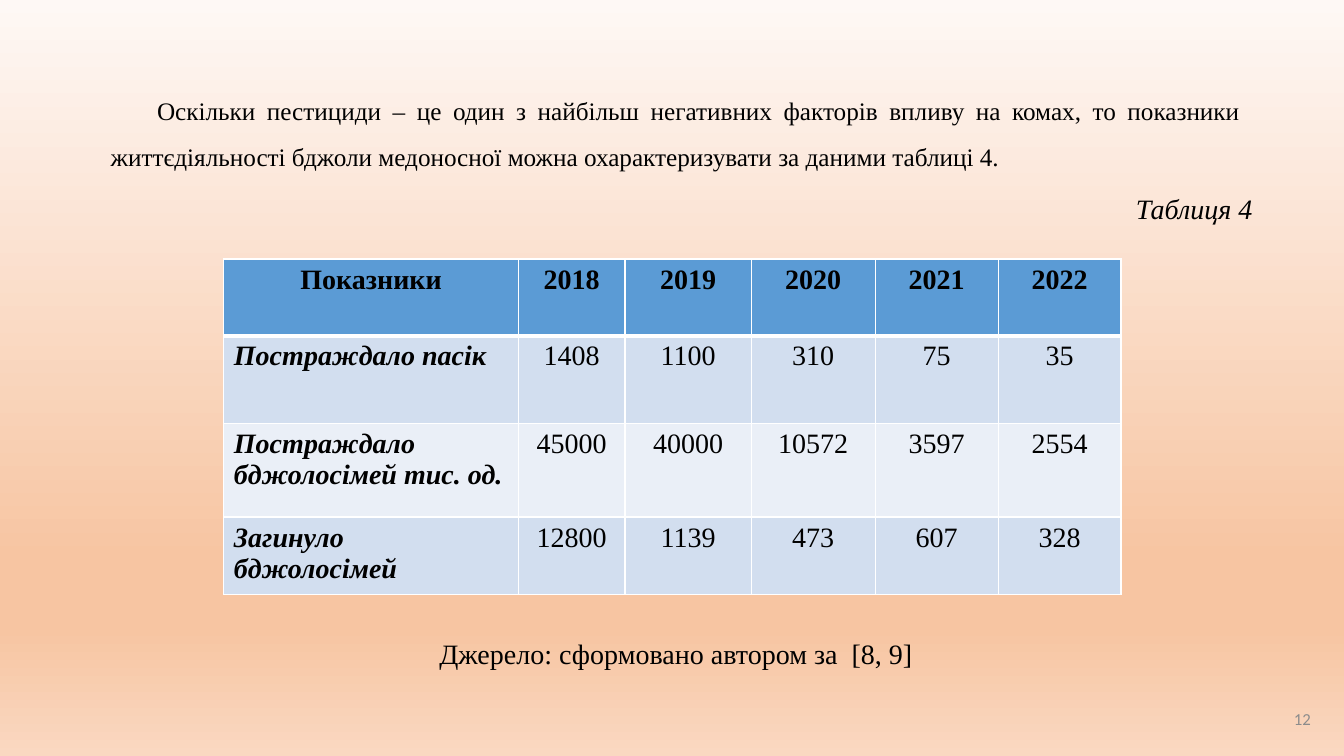
from lxml import etree
from pptx import Presentation
from pptx.dml.color import RGBColor
from pptx.enum.text import MSO_ANCHOR, PP_ALIGN
from pptx.oxml.ns import qn
from pptx.util import Inches, Pt

LEFT, RIGHT = PP_ALIGN.LEFT, PP_ALIGN.RIGHT
MID, JUST = PP_ALIGN.CENTER, PP_ALIGN.JUSTIFY
TOP, CENTER, BOTTOM = MSO_ANCHOR.TOP, MSO_ANCHOR.MIDDLE, MSO_ANCHOR.BOTTOM
SERIF, SANS = "Times New Roman", "Calibri"
COLORS = {
    "text": "000000", "page": "8C8C8C", "line": "FFFFFF",
    "head": "5B9BD5", "odd": "D2DEEF", "even": "EAEFF7",
}
STOPS = [(0, "FEF8F5"), (74, "F7C5A2"), (83, "F7C5A2"), (100, "FAD8C1")]

prs = Presentation()
prs.slide_width, prs.slide_height = Inches(13.33), Inches(7.5)
slide = prs.slides.add_slide(prs.slide_layouts[6])

fill = slide.background.fill
fill.gradient()
fill.gradient_angle = 270
stops = slide.background._cSld.find(".//" + qn("a:gsLst"))
for old in list(stops):
    stops.remove(old)
for pos, tone in STOPS:
    stop = etree.SubElement(stops, qn("a:gs"), pos=str(pos * 1000))
    etree.SubElement(stop, qn("a:srgbClr"), val=tone)


def add_box(left, top, width, height, anchor):
    box = slide.shapes.add_textbox(
        Inches(left), Inches(top), Inches(width), Inches(height))
    frame = box.text_frame
    frame.word_wrap = True
    frame.vertical_anchor = anchor
    return frame


def add_run(para, text, align, size=20, bold=False, italic=False,
            font=SERIF, color="text"):
    para.alignment = align
    run = para.add_run()
    run.text = text
    run.font.name = font
    run.font.size = Pt(size)
    run.font.bold = bold
    run.font.italic = italic
    run.font.color.rgb = RGBColor.from_string(COLORS[color])


intro = add_box(1, 0.69, 11.4, 1.06, BOTTOM).paragraphs[0]
intro.line_spacing = 1.5
intro._p.get_or_add_pPr().set("indent", str(Inches(0.46)))
add_run(intro, "Оскільки пестициди – це один з найбільш негативних факторів "
        "впливу на комах, то показники життєдіяльності бджоли медоносної "
        "можна охарактеризувати за даними таблиці 4.", JUST, 18)

notes = add_box(0.89, 1.89, 11.63, 4.92, TOP)
label = notes.paragraphs[0]
label.line_spacing = 0.9
add_run(label, "Таблиця 4", RIGHT, italic=True)
source = notes.add_paragraph()
source.line_spacing = 0.9
source.space_before = Pt(296)
add_run(source, "Джерело: сформовано автором за  [8, 9]", MID)

ROWS = [
    ["Показники", "2018", "2019", "2020", "2021", "2022"],
    ["Постраждало пасік", "1408", "1100", "310", "75", "35"],
    ["Постраждало бджолосімей тис. од.",
     "45000", "40000", "10572", "3597", "2554"],
    ["Загинуло бджолосімей", "12800", "1139", "473", "607", "328"],
]
WIDTHS = [2.92, 1.06, 1.25, 1.23, 1.22, 1.22]
HEIGHTS = [0.76, 0.87, 0.93, 0.76]

table = slide.shapes.add_table(
    len(ROWS), len(WIDTHS), Inches(2.22), Inches(2.57),
    Inches(8.89), Inches(3.33)).table
for col, width in zip(table.columns, WIDTHS):
    col.width = Inches(width)
for r, (texts, height) in enumerate(zip(ROWS, HEIGHTS)):
    table.rows[r].height = Inches(height)
    shade = "head" if r == 0 else "odd" if r % 2 else "even"
    for c, text in enumerate(texts):
        cell = table.cell(r, c)
        cell.fill.solid()
        cell.fill.fore_color.rgb = RGBColor.from_string(COLORS[shade])
        add_run(cell.text_frame.paragraphs[0], text,
                LEFT if r and c == 0 else MID,
                bold=r == 0 or c == 0, italic=r > 0 and c == 0)
        props = cell._tc.get_or_add_tcPr()
        for n, side in enumerate(["lnL", "lnR", "lnT", "lnB"]):
            thick = (r, side) in [(0, "lnB"), (1, "lnT")]
            edge = etree.Element(
                qn("a:" + side), w=str(Pt(3 if thick else 1)))
            paint = etree.SubElement(edge, qn("a:solidFill"))
            etree.SubElement(paint, qn("a:srgbClr"), val=COLORS["line"])
            props.insert(n, edge)

page = add_box(12.5, 6.92, 0.6, 0.43, CENTER).paragraphs[0]
add_run(page, "12", RIGHT, 12, font=SANS, color="page")

prs.save("out.pptx")
